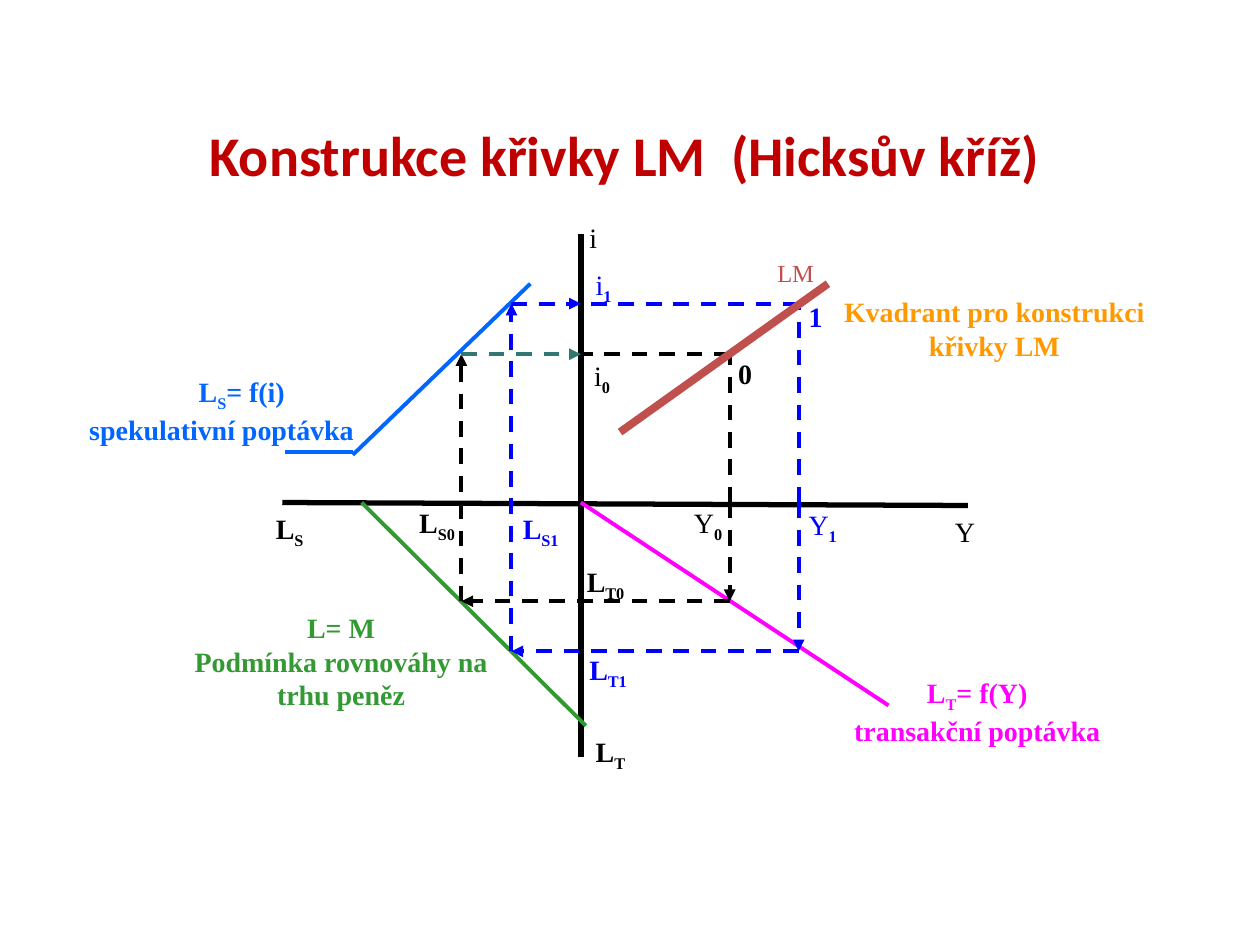
from dataclasses import dataclass

import pptx
import pptx.dml.color
import pptx.enum.dml
import pptx.enum.shapes
import pptx.enum.text
import pptx.oxml
import pptx.oxml.ns
import pptx.slide
import pptx.util
from pptx.util import Cm


@dataclass(frozen=True)
class Theme:
    title: str = "C00000"
    black: str = "000000"
    blue: str = "0000FF"
    speculative: str = "0066FF"
    transaction: str = "FF00FF"
    equilibrium: str = "339933"
    lm: str = "C0504D"
    quadrant: str = "FF9900"
    teal: str = "307871"
    title_font: str = "Calibri"
    body_font: str = "Times New Roman"
    title_size: int = 32
    body_size: int = 16
    small_size: int = 14
    axis_width: float = 3
    line_width: float = 2.25
    lm_width: float = 4.5


THEME = Theme()


@dataclass(frozen=True)
class Line:
    """A straight line between two points in centimetres."""
    start: tuple[float, float]
    end: tuple[float, float]
    color: str
    width: float = THEME.line_width
    dashed: bool = False
    arrow: bool = False


@dataclass(frozen=True)
class Label:
    """Text in a box; within a line, |x| marks x as a subscript."""
    lines: tuple[str, ...]
    left: float
    top: float
    width: float
    color: str
    height: float = 0.94
    bold: bool = False
    size: int = THEME.body_size
    font: str = THEME.body_font
    centered: tuple[bool, ...] = (False,)


def draw_line(slide: pptx.slide.Slide, line: Line) -> None:
    connector = slide.shapes.add_connector(
        pptx.enum.shapes.MSO_CONNECTOR.STRAIGHT,
        *(Cm(value) for value in line.start + line.end))
    connector.line.color.rgb = pptx.dml.color.RGBColor.from_string(line.color)
    connector.line.width = pptx.util.Pt(line.width)
    if line.dashed:
        connector.line.dash_style = pptx.enum.dml.MSO_LINE.DASH
    if line.arrow:
        tail = pptx.oxml.parse_xml(
            f'<a:tailEnd {pptx.oxml.ns.nsdecls("a")} type="triangle"/>')
        connector.line._get_or_add_ln().append(tail)
    properties = connector._element.spPr
    properties.append(pptx.oxml.parse_xml(
        f'<a:effectLst {pptx.oxml.ns.nsdecls("a")}/>'))


def draw_label(slide: pptx.slide.Slide, label: Label) -> None:
    box = slide.shapes.add_textbox(
        Cm(label.left), Cm(label.top), Cm(label.width), Cm(label.height))
    frame = box.text_frame
    frame.word_wrap = True
    for index, text in enumerate(label.lines):
        paragraph = frame.add_paragraph() if index else frame.paragraphs[0]
        if label.centered[index % len(label.centered)]:
            paragraph.alignment = pptx.enum.text.PP_ALIGN.CENTER
        font = paragraph.font
        font.name = label.font
        font.size = pptx.util.Pt(label.size)
        font.bold = label.bold
        font.color.rgb = pptx.dml.color.RGBColor.from_string(label.color)
        for part, piece in enumerate(text.split("|")):
            if not piece:
                continue
            run = paragraph.add_run()
            run.text = piece
            if part % 2:
                run.font.bold = True
                run.font._element.set("baseline", "-25000")


# Positions shared by the axes, curves and equilibrium paths
ORIGIN_X, ORIGIN_Y = 11.71, 10.13


@dataclass(frozen=True)
class Equilibrium:
    income: float
    speculative: float
    interest: float
    transaction: float
    color: str
    interest_color: str


EQUILIBRIA = (
    Equilibrium(14.71, 9.3, 7.14, 12.12, THEME.black, THEME.teal),
    Equilibrium(16.1, 10.31, 6.12, 13.13, THEME.blue, THEME.blue),
)

AXES = (
    Line((ORIGIN_X, 4.72), (ORIGIN_X, 15.27), THEME.black, THEME.axis_width),
    Line((5.69, 10.13), (19.51, 10.19), THEME.black, THEME.axis_width),
)

CURVES = (
    Line((ORIGIN_X, ORIGIN_Y), (17.91, 14.22), THEME.transaction),
    Line((10.69, 5.72), (7.11, 9.17), THEME.speculative),
    Line((7.11, 9.12), (5.74, 9.12), THEME.speculative),
    Line((7.29, ORIGIN_Y), (11.81, 14.63), THEME.equilibrium),
)

LM_CURVE = Line((16.69, 5.72), (12.5, 8.71), THEME.lm, THEME.lm_width)


def equilibrium_path(point: Equilibrium) -> list[Line]:
    """Dashed path from income round the four quadrants to the LM curve."""
    on_axis = (point.income, ORIGIN_Y)
    transaction = (point.income, point.transaction)
    equilibrium = (point.speculative, point.transaction)
    speculative = (point.speculative, point.interest)
    interest = (ORIGIN_X, point.interest)
    on_lm = (point.income, point.interest)
    legs = (
        (on_axis, transaction, point.color, True),
        (transaction, equilibrium, point.color, True),
        (equilibrium, speculative, point.color, True),
        (speculative, interest, point.interest_color, True),
        (on_axis, on_lm, point.color, False),
        (on_lm, interest, point.color, False),
    )
    return [Line(start, end, color, dashed=True, arrow=arrow)
            for start, end, color, arrow in legs]


LABELS = (
    Label(("Konstrukce křivky LM  (Hicksův kříž)",), 2.79, 2.31, 19.61,
          THEME.title, 1.42, True, THEME.title_size, THEME.title_font, (True,)),
    # Axis names
    Label(("i",), 11.63, 4.32, 0.61, THEME.black),
    Label(("Y",), 19, 10.24, 0.76, THEME.black),
    Label(("L|S|",), 5.31, 10.19, 1.19, THEME.black, bold=True),
    Label(("L|T|",), 11.76, 14.68, 1.19, THEME.black, bold=True),
    # Curve descriptions
    Label(("Kvadrant pro konstrukci křivky LM",), 16.64, 5.82, 6.81,
          THEME.quadrant, 1.63, True, centered=(True,)),
    Label(("L|T|= f(Y)", "transakční poptávka"), 16.74, 13.49, 5.92,
          THEME.transaction, 1.63, True, centered=(True,)),
    Label(("L|S|= f(i)", "spekulativní poptávka"), 1.55, 7.42, 6.65,
          THEME.speculative, 1.63, True, centered=(True, False)),
    Label(("L= M", "Podmínka rovnováhy na trhu peněz"), 3.38, 12.19, 6.99,
          THEME.equilibrium, 2.31, True, centered=(True,)),
    Label(("LM",), 15.42, 5.08, 1.7, THEME.lm, 0.86, size=THEME.small_size),
    # Values of the two equilibria
    Label(("Y|0|",), 13.74, 10.06, 1.5, THEME.black),
    Label(("Y|1|",), 16.05, 10.11, 1.5, THEME.blue),
    Label(("L|T1|",), 11.63, 13.03, 1.75, THEME.blue, bold=True),
    Label(("L|T0|",), 11.58, 11.25, 1.3, THEME.black, bold=True),
    Label(("L|S0|",), 8.2, 10.06, 1.4, THEME.black, bold=True),
    Label(("L|S1|",), 10.29, 10.19, 1.37, THEME.blue, bold=True),
    Label(("i|1|",), 11.76, 5.26, 0.91, THEME.blue),
    Label(("i|0|",), 11.73, 7.11, 0.89, THEME.black),
    Label(("0",), 14.63, 7.06, 0.76, THEME.black, bold=True),
    Label(("1",), 16.05, 5.92, 0.61, THEME.blue, bold=True),
)


def main() -> None:
    presentation = pptx.Presentation()
    presentation.slide_width = Cm(25.4)
    presentation.slide_height = Cm(19.05)
    slide = presentation.slides.add_slide(presentation.slide_layouts[6])

    # Lines from back to front, then the text
    paths = [leg for point in EQUILIBRIA for leg in equilibrium_path(point)]
    for line in (*AXES, *CURVES, *paths, LM_CURVE):
        draw_line(slide, line)
    for label in LABELS:
        draw_label(slide, label)

    presentation.save("out.pptx")


if __name__ == "__main__":
    main()
